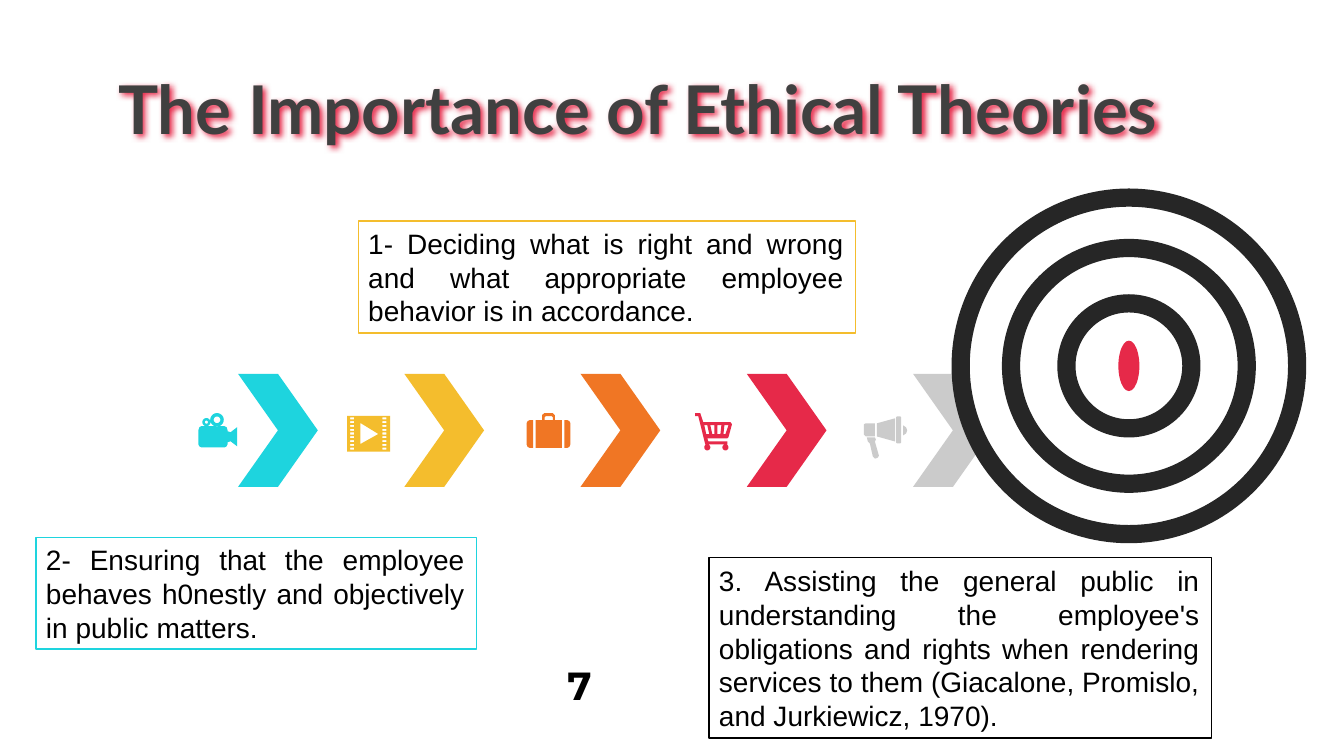
from math import cos, pi, sin

from lxml import etree
from pptx import Presentation
from pptx.dml.color import RGBColor
from pptx.enum.shapes import MSO_SHAPE
from pptx.enum.text import MSO_ANCHOR, PP_ALIGN
from pptx.oxml import parse_xml
from pptx.util import Cm, Pt

CHEVRON, OVAL, RECTANGLE = MSO_SHAPE.CHEVRON, MSO_SHAPE.OVAL, MSO_SHAPE.RECTANGLE
CENTER, JUSTIFY, MIDDLE = PP_ALIGN.CENTER, PP_ALIGN.JUSTIFY, MSO_ANCHOR.MIDDLE

CYAN = RGBColor(0x1E, 0xD4, 0xDE)
YELLOW = RGBColor(0xF4, 0xBD, 0x2D)
ORANGE = RGBColor(0xF0, 0x76, 0x24)
RED = RGBColor(0xE6, 0x29, 0x49)
GRAY = RGBColor(0xCB, 0xCB, 0xCB)
CHARCOAL = RGBColor(0x26, 0x26, 0x26)
TITLE_GRAY = RGBColor(0x40, 0x40, 0x40)
WHITE = RGBColor(0xFF, 0xFF, 0xFF)
BLACK = RGBColor(0, 0, 0)

ICON_UNIT = Cm(2.54) / 1000


def circle(x, y, radius):
    return [(x + radius * cos(k * pi / 12), y + radius * sin(k * pi / 12)) for k in range(24)]


def box(left, top, right, bottom):
    return [(left, top), (right, top), (right, bottom), (left, bottom)]


prs = Presentation()
prs.slide_width, prs.slide_height = Cm(33.87), Cm(19.05)
slide = prs.slides.add_slide(prs.slide_layouts[6])
shapes = slide.shapes

# Title with a soft red shadow
title = shapes.add_textbox(Cm(0), Cm(1.83), Cm(32.16), Cm(2.01))
title.text_frame.word_wrap = True
title.text_frame.vertical_anchor = MIDDLE
heading = title.text_frame.paragraphs[0]
heading.text = "The Importance of Ethical Theories"
heading.alignment = CENTER
heading.line_spacing = 0.9
for name, value in {"name": "Lato", "size": Pt(48), "bold": True}.items():
    setattr(heading.font, name, value)
heading.font.color.rgb = TITLE_GRAY
title._element.spPr.append(parse_xml(
    '<a:effectLst xmlns:a="http://schemas.openxmlformats.org/drawingml/2006/main">'
    '<a:outerShdw blurRad="50800" dist="25400" dir="2640000" algn="bl" rotWithShape="0">'
    f'<a:srgbClr val="{RED}"/></a:outerShdw></a:effectLst>'))

# Row of chevrons
for left, color in [(6, CYAN), (10.19, YELLOW), (14.63, ORANGE), (18.82, RED), (23.01, GRAY)]:
    chevron = shapes.add_shape(CHEVRON, Cm(left), Cm(9.42), Cm(2.01), Cm(2.85))
    chevron.shadow.inherit = False
    chevron.fill.solid()
    chevron.fill.fore_color.rgb = color
    chevron.line.fill.background()

# Icon outlines in hundredths of an inch; inner contours are holes
camera = [
    [(0, 17), (1, 14), (3, 13), (26, 13), (28, 14), (29, 17), (29, 18), (32, 19),
     (38.5, 14), (38.5, 33), (32, 28), (29, 29), (29, 31), (28, 33), (26, 34),
     (3, 34), (1, 33), (0, 31)],
    circle(8, 9, 4), circle(8, 9, 1.6), circle(18.5, 6.7, 6.7), circle(18.5, 6.7, 3.3),
]
film = [box(0, 0, 42.5, 35.5), [(13, 7), (13, 28), (31, 18)]]
film += [box(left, 1.5 + 3.75 * row, left + 4, 3.5 + 3.75 * row)
         for left in (3, 35) for row in range(9)]
suitcase = [
    [(3, 7), (6.5, 7), (6.5, 34.5), (3, 34.5), (1, 33.5), (0, 31), (0, 10), (1, 8)],
    [(37.5, 7), (40.5, 7), (42.5, 8), (43.5, 10), (43.5, 31), (42.5, 33.5), (40.5, 34.5),
     (37.5, 34.5)],
    [(9, 7), (15.5, 7), (15.5, 2), (17.5, 0), (26, 0), (28, 2), (28, 7), (35, 7),
     (35, 34.5), (9, 34.5)],
    [(18, 7), (18, 4), (19, 3), (25, 3), (26, 4), (26, 7)],
]
cart = [
    [(0, 0), (5, 0), (8, 9), (35, 9), (36.5, 11), (33, 24), (32, 25), (12, 25), (13, 28),
     (32, 28), (32, 31), (10, 31), (3, 3), (0, 3)],
    [(29, 12), (28, 21), (30, 21), (33, 12)],
    [(22, 12), (22, 21), (25, 21), (26, 12)],
    [(15, 12), (17, 21), (19, 21), (19, 12)],
    [(9, 12), (11, 21), (14, 21), (12, 12)],
    circle(12, 34, 3), circle(30, 34, 3),
]
megaphone = [
    [(3, 21), (11, 21), (12, 23), (11, 25), (15, 39), (14, 41), (11, 42), (9, 40),
     (6, 27), (4, 25)],
    [(39, 9), (42, 11), (43, 14), (42, 17), (39, 19)],
    [(2, 7), (11, 7), (11, 20), (2, 20), (0, 18), (0, 8)],
    [(31, 2), (31, 25), (13, 20), (13, 7)],
    [(33, 0), (36, 0), (37, 1), (37, 26), (36, 27), (33, 27), (32, 26), (32, 1)],
]
for contours, left, top, color in [
    (camera, 5, 10.41, CYAN), (film, 8.75, 10.48, YELLOW), (suitcase, 13.27, 10.41, ORANGE),
    (cart, 17.52, 10.41, RED), (megaphone, 21.77, 10.49, GRAY),
]:
    outline = None
    for contour in contours:
        points = [(round(10 * x), round(10 * y)) for x, y in contour]
        if outline is None:
            outline = shapes.build_freeform(*points[0], scale=ICON_UNIT)
        else:
            outline.move_to(*points[0])
        outline.add_line_segments(points[1:], close=True)
    icon = outline.convert_to_shape(Cm(left), Cm(top))
    icon.shadow.inherit = False
    icon.fill.solid()
    icon.fill.fore_color.rgb = color
    icon.line.fill.background()

# Target: rings around one centre, then the bullseye
target = shapes.add_group_shape()
for width, height, color in [(8.48, 8.48, WHITE), (5.94, 5.94, WHITE), (3.15, 3.15, WHITE),
                             (0.53, 1.27, RED)]:
    ring = target.shapes.add_shape(OVAL, Cm(28.45 - width / 2), Cm(9.22 - height / 2),
                                   Cm(width), Cm(height))
    ring.shadow.inherit = False
    ring.fill.solid()
    ring.fill.fore_color.rgb = color
    if color == WHITE:
        ring.line.color.rgb = CHARCOAL
        ring.line.width = Pt(13)
    else:
        ring.line.fill.background()

# Numbered reasons
for text, left, top, width, height, color in [
    ("2- Ensuring that the employee behaves h0nestly and objectively in public matters.",
     0.91, 13.54, 11.1, 2.82, CYAN),
    ("1- Deciding what is right and wrong and what appropriate employee behavior is in "
     "accordance.", 9.03, 5.57, 12.53, 2.82, YELLOW),
    ("3. Assisting the general public in understanding the employee's obligations and rights "
     "when rendering services to them (Giacalone, Promislo, and Jurkiewicz, 1970).",
     17.87, 14.05, 12.66, 4.55, BLACK),
]:
    reason = shapes.add_shape(RECTANGLE, Cm(left), Cm(top), Cm(width), Cm(height))
    reason.shadow.inherit = False
    reason.fill.solid()
    reason.fill.fore_color.rgb = WHITE
    reason.line.color.rgb = color
    reason.line.width = Pt(1)
    frame = reason.text_frame
    for name, value in {"word_wrap": True, "vertical_anchor": MIDDLE,
                        "margin_right": Cm(0.3)}.items():
        setattr(frame, name, value)
    paragraph = frame.paragraphs[0]
    paragraph.text = text
    paragraph.alignment = JUSTIFY
    paragraph.font.name = "Arial"
    paragraph.font.size = Pt(20)
    paragraph.font.color.rgb = BLACK

page_number = shapes.add_textbox(Cm(14.05), Cm(16.54), Cm(1.07), Cm(1.45))
page_number.text_frame.word_wrap = True
number = page_number.text_frame.paragraphs[0]
number.text = "7"
for name, value in {"name": "Montserrat", "size": Pt(28), "bold": True}.items():
    setattr(number.font, name, value)
number.font.color.rgb = BLACK

prs.save("out.pptx")
